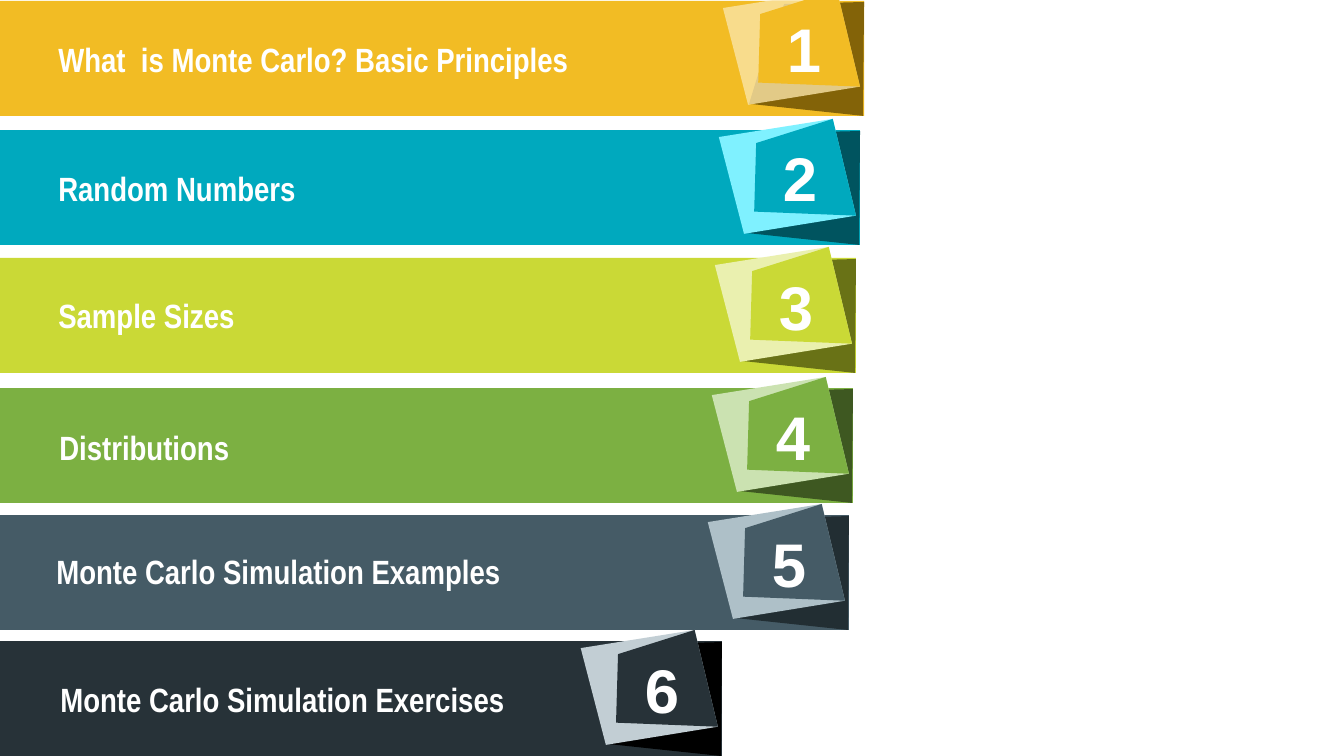
from pptx import Presentation
from pptx.dml.color import RGBColor
from pptx.enum.shapes import MSO_SHAPE
from pptx.enum.text import MSO_ANCHOR, MSO_AUTO_SIZE, PP_ALIGN
from pptx.oxml.ns import qn
from pptx.util import Pt
from lxml import etree

RECTANGLE = MSO_SHAPE.RECTANGLE
MIDDLE = MSO_ANCHOR.MIDDLE
CENTER = PP_ALIGN.CENTER
GROW = MSO_AUTO_SIZE.SHAPE_TO_FIT_TEXT
PX = 9144  # 100 px to the inch
BAR_HEIGHT = 114
WHITE = "FFFFFF"

# Outlines measured from the top right corner of a bar
SHADOW = [(0, 1), (-1, 114), (-114, 102), (-91, 27), (-79, 3)]
BACK_SHEET = [(-27, -11), (-4, 85), (-115, 103), (-140, 7)]
FRONT_SHEET = [(-27, -11), (-4, 85), (-105, 81), (-103, 13)]

# Label, bar top, bar width, label left, label top, label width, bar, shadow and back colours
TOPICS = [
    ("What  is Monte Carlo? Basic Principles", 1, 857, 48, 34, 540, "F2BC24", "836308", "FAE4A7"),
    ("Random Numbers", 129, 853, 48, 162, 424, "00A9BE", "00545F", "7FF1FF"),
    ("Sample Sizes", 256, 849, 48, 288, 424, "CAD936", "697216", "EAF0AF"),
    ("Distributions", 385, 846, 49, 419, 424, "7CB042", "3E5821", "CBE2B1"),
    ("Monte Carlo Simulation Examples", 511, 842, 46, 542, 552, "455B66", "222E33", "AEC0C8"),
    ("Monte Carlo Simulation Exercises", 636, 716, 50, 669, 537, "273238", "000000", "C2CED4"),
]


def paint(shape, color):
    """Give a shape a plain fill with no line or shadow."""
    shape.shadow.inherit = False
    shape.fill.solid()
    shape.fill.fore_color.rgb = RGBColor.from_string(color)
    shape.line.fill.background()


def write(shape, text, font_name, size):
    """Set white bold text and return its paragraph."""
    paragraph = shape.text_frame.paragraphs[0]
    paragraph.text = text
    paragraph.font.name = font_name
    paragraph.font.size = Pt(size)
    paragraph.font.bold = True
    paragraph.font.color.rgb = RGBColor.from_string(WHITE)
    return paragraph


presentation = Presentation()
presentation.slide_width = 1333 * PX
presentation.slide_height = 750 * PX
slide = presentation.slides.add_slide(presentation.slide_layouts[6])

for number, topic in enumerate(TOPICS, start=1):
    label, top, width, label_left, label_top, label_width, color, dark, light = topic
    group = slide.shapes.add_group_shape()
    group.name = f"Topic {number}"

    bar = group.shapes.add_shape(RECTANGLE, 0, top * PX, width * PX, BAR_HEIGHT * PX)
    paint(bar, color)

    badge = []
    for outline, fill in ((SHADOW, dark), (BACK_SHEET, light), (FRONT_SHEET, color)):
        points = [(width + x, top + y) for x, y in outline]
        builder = group.shapes.build_freeform(*points[0], scale=PX)
        builder.add_line_segments(points[1:], close=True)
        part = builder.convert_to_shape()
        paint(part, fill)
        badge.append(part)
    shadow, back_sheet, front_sheet = badge

    if number == 1:
        back_color = back_sheet.fill._xPr.find(qn("a:solidFill"))[0]
        etree.SubElement(back_color, qn("a:alpha"), val="80000")

    frame = front_sheet.text_frame
    frame.vertical_anchor = MIDDLE
    frame.margin_left, frame.margin_top = 20 * PX, 40 * PX
    frame.margin_right, frame.margin_bottom = 30 * PX, 20 * PX
    write(front_sheet, str(number), "Arial", 44).alignment = CENTER

    label_box = group.shapes.add_textbox(
        label_left * PX, label_top * PX, label_width * PX, 50 * PX)
    label_box.text_frame.word_wrap = True
    label_box.text_frame.auto_size = GROW
    write(label_box, label, "Arial Narrow", 24)

presentation.save("out.pptx")
